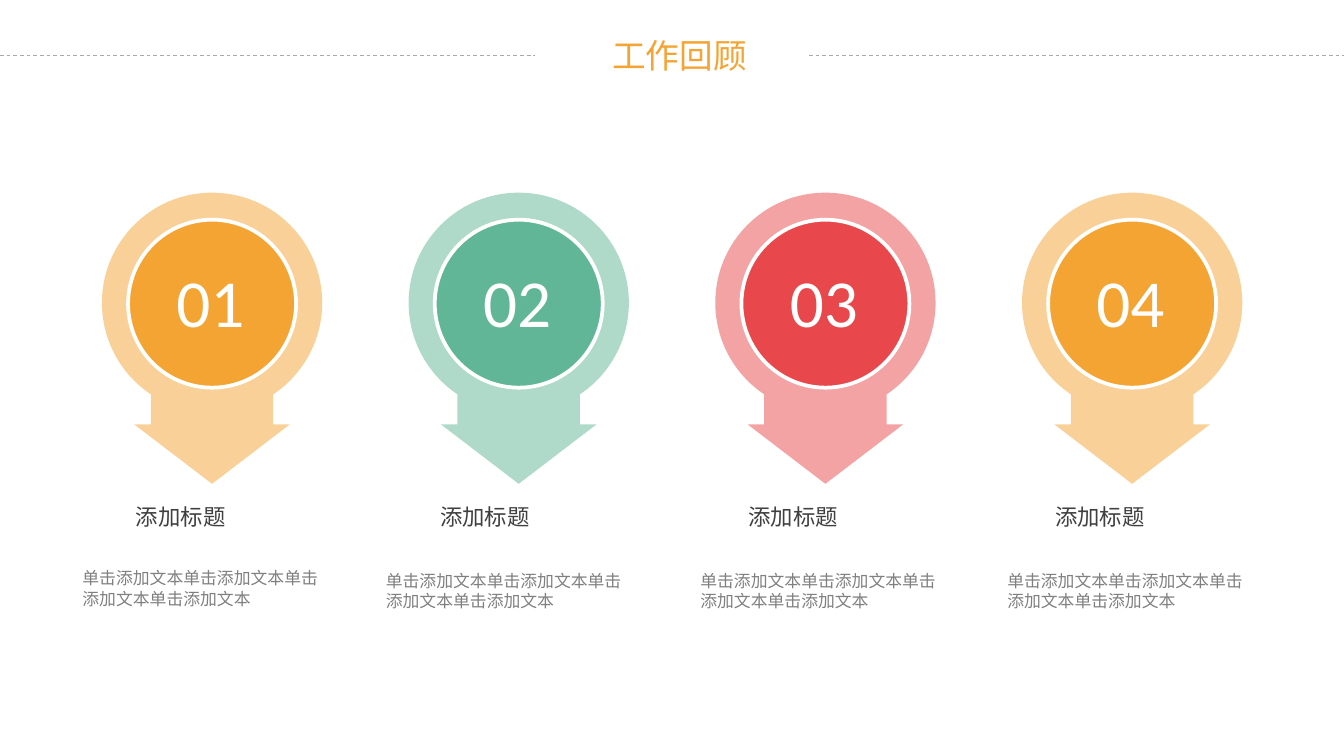
import math
from dataclasses import dataclass

import lxml.etree
import pptx
import pptx.dml.color
import pptx.enum.dml
import pptx.enum.shapes
import pptx.enum.text
import pptx.oxml.ns
import pptx.util

Pt = pptx.util.Pt
qn = pptx.oxml.ns.qn


@dataclass(frozen=True)
class Theme:
    orange: str = "F4A432"
    green: str = "61B697"
    red: str = "E8484B"
    white: str = "FFFFFF"
    heading: str = "404040"
    body: str = "808080"
    rule: str = "AAAAAA"
    latin: str = "Calibri"
    chinese: str = "Noto Sans CJK SC"
    title_size: float = 18
    number_size: float = 36
    heading_size: float = 12
    body_size: float = 9


@dataclass(frozen=True)
class Box:
    left: float
    top: float
    width: float
    height: float

    def inner(self, left, top, width, height):
        return Box(self.left + left, self.top + top, width, height)

    def lengths(self):
        return [Pt(value) for value in (self.left, self.top, self.width, self.height)]


THEME = Theme()
HEADING = "添加标题"
BODY = "单击添加文本" * 4
PIN_LEFT, PIN_TOP, PIN_PITCH = 54.6, 103.2, 164.3
STEPS = [
    (THEME.orange, 13.2, Box(39.2, 301.7, 139.7, 27.4)),
    (THEME.green, 11.9, Box(201.7, 303.1, 138.2, 27.4)),
    (THEME.red, 12.8, Box(370.2, 303.1, 140.4, 27.4)),
    (THEME.orange, 12.7, Box(534.6, 303.1, 140.4, 27.4)),
]


def rgb(value):
    return pptx.dml.color.RGBColor.from_string(value)


def paint(shape, color):
    shape.shadow.inherit = False
    shape.fill.solid()
    shape.fill.fore_color.rgb = rgb(color)


def add_text(shapes, box, text, size, color, font, wrap=False, margins=(7.2, 3.6)):
    label = shapes.add_textbox(*box.lengths())
    frame = label.text_frame
    frame.word_wrap = wrap
    frame.auto_size = pptx.enum.text.MSO_AUTO_SIZE.SHAPE_TO_FIT_TEXT
    frame.margin_left = frame.margin_right = Pt(margins[0])
    frame.margin_top = frame.margin_bottom = Pt(margins[1])
    para = frame.paragraphs[0]
    para.text = text
    para.font.size = Pt(size)
    para.font.name = font
    para.font.color.rgb = rgb(color)
    return frame


def add_header(page, box):
    frame = add_text(page.shapes, box.inner(321.5, 0, 83.5, 27.4), "工作回顾",
                     THEME.title_size, THEME.orange, THEME.latin, margins=(5, 2.7))
    frame.paragraphs[0].alignment = pptx.enum.text.PP_ALIGN.RIGHT
    middle = Pt(box.top + 13.7)
    rule_width = 286.6
    for left in (box.left, box.left + box.width - rule_width):
        rule = page.shapes.add_connector(pptx.enum.shapes.MSO_CONNECTOR.STRAIGHT,
                                         Pt(left), middle, Pt(left + rule_width), middle)
        rule.line.color.rgb = rgb(THEME.rule)
        rule.line.width = Pt(0.5)
        rule.line.dash_style = pptx.enum.dml.MSO_LINE.DASH
        lxml.etree.SubElement(rule._element.spPr, qn("a:effectLst"))


def circle_point(radius, angle):
    return radius + radius * math.sin(angle), radius + radius * math.cos(angle)


def bend(line, radius, start, end):
    line.tag = qn("a:cubicBezTo")
    reach = radius * 4 / 3 * math.tan((end - start) / 4)
    for angle, pull in ((end, -reach), (start, reach)):
        x, y = circle_point(radius, angle)
        control = lxml.etree.Element(qn("a:pt"))
        control.set("x", str(Pt(x + pull * math.cos(angle))))
        control.set("y", str(Pt(y - pull * math.sin(angle))))
        line.insert(0, control)


def add_pin(page, box, color):
    radius = box.width / 2
    stem, head, shoulder = 32.8, 41.6, 124.2
    opening = math.asin(stem / radius)
    quarter = math.pi / 2
    angles = [opening, quarter, 2 * quarter, 3 * quarter, 4 * quarter - opening]
    points = [circle_point(radius, angle) for angle in angles]
    points += [(radius - stem, shoulder), (radius - head, shoulder),
               (radius, box.height),
               (radius + head, shoulder), (radius + stem, shoulder)]
    outline = [(Pt(x), Pt(y)) for x, y in points]
    builder = page.shapes.build_freeform(*outline[0], scale=1.0)
    builder.add_line_segments(outline[1:], close=True)
    pin = builder.convert_to_shape(Pt(box.left), Pt(box.top))
    lines = list(pin._element.iter(qn("a:lnTo")))
    for line, start, end in zip(lines, angles, angles[1:]):
        bend(line, radius, start, end)
    paint(pin, color)
    pin.line.fill.background()
    fill_color = pin._element.spPr.find(qn("a:solidFill"))[0]
    lxml.etree.SubElement(fill_color, qn("a:alpha"), val="50000")


def add_disc(page, box, number, color):
    group = page.shapes.add_group_shape()
    disc = group.shapes.add_shape(pptx.enum.shapes.MSO_SHAPE.OVAL, *box.lengths())
    paint(disc, color)
    disc.line.color.rgb = rgb(THEME.white)
    disc.line.width = Pt(2)
    frame = add_text(group.shapes, box.inner(18.8, 17.9, 51.1, 51.1), f"{number:02d}",
                     THEME.number_size, THEME.white, THEME.latin)
    frame.vertical_anchor = pptx.enum.text.MSO_ANCHOR.MIDDLE


def add_step(page, box, number, color, heading_offset, body_box):
    add_pin(page, box, color)
    add_disc(page, box.inner(14, 14.5, 90, 90), number, color)
    add_text(page.shapes, box.inner(heading_offset, 163.6, 59, 20.2), HEADING,
             THEME.heading_size, THEME.heading, THEME.chinese, margins=(5, 2.7))
    add_text(page.shapes, body_box, BODY, THEME.body_size, THEME.body,
             THEME.chinese, wrap=True, margins=(5, 2.7))


def main():
    deck = pptx.Presentation()
    deck.slide_width, deck.slide_height = Pt(720), Pt(405)
    page = deck.slides.add_slide(deck.slide_layouts[6])
    add_header(page, Box(0, 15.8, 720, 27.4))
    for index, (color, heading_offset, body_box) in enumerate(STEPS):
        box = Box(PIN_LEFT + index * PIN_PITCH, PIN_TOP, 118, 156)
        add_step(page, box, index + 1, color, heading_offset, body_box)
    deck.save("out.pptx")


if __name__ == "__main__":
    main()
